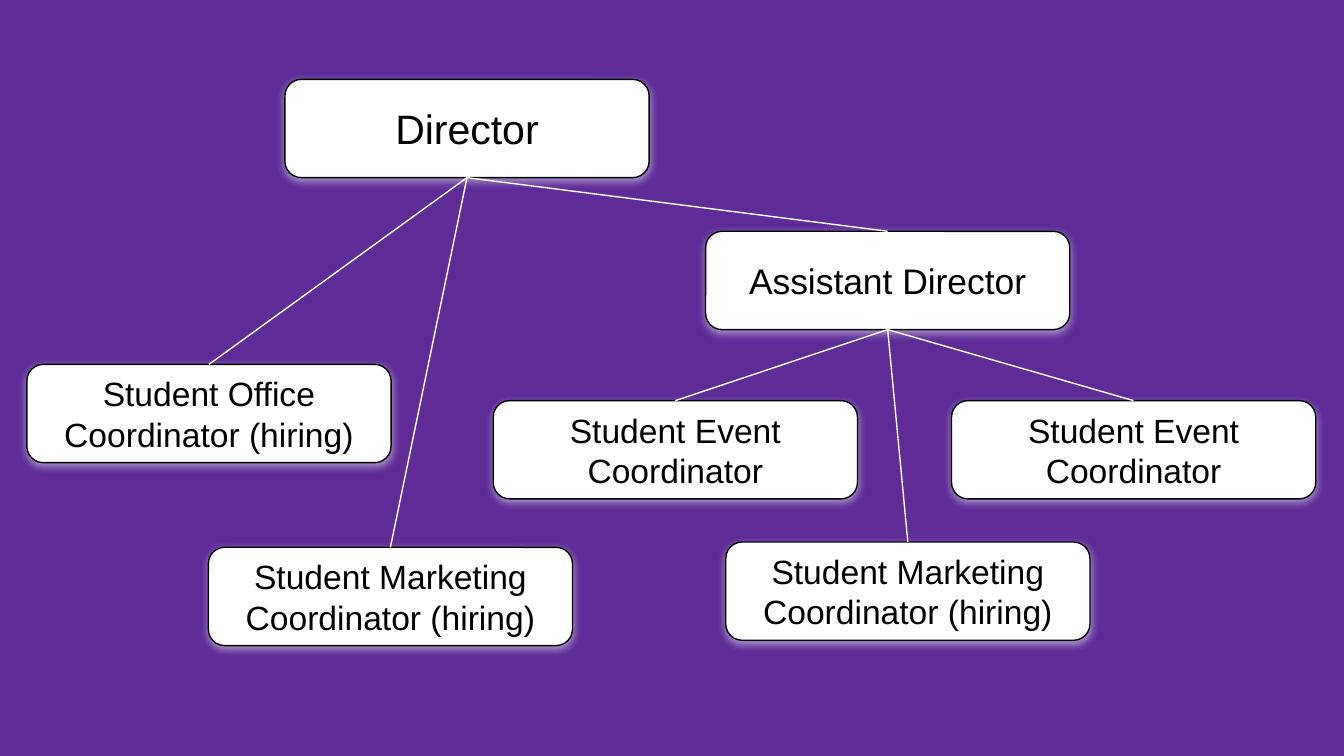
from dataclasses import dataclass

from lxml import etree
from pptx import Presentation
from pptx import util as u
from pptx.dml.color import RGBColor
from pptx.enum import shapes, text
from pptx.oxml.ns import qn
from pptx.shapes.autoshape import Shape
from pptx.slide import Slide

PURPLE = RGBColor(0x5E, 0x2B, 0x97)
WHITE = RGBColor(0xFF, 0xFF, 0xFF)
BLACK = RGBColor(0x00, 0x00, 0x00)

SLIDE_W = u.Inches(10)
SLIDE_H = SLIDE_W * 9 // 16
LINE_WIDTH = u.Pt(0.75)
BOX_W, BOX_H = 27.1, 13  # percent of the slide's width and height
TOP, BOTTOM = 0, 2  # connection sites of a box


@dataclass(frozen=True)
class Role:
    """A post in the chart; left and top are percentages of the slide's size."""
    title: str
    left: float
    top: float
    size: int = 18
    reports_to: int | None = None  # index of the superior in ROLES


ROLES = [
    Role("Director", 21.2, 10.5, size=22),
    Role("Student Office Coordinator (hiring)", 2, 48.2, reports_to=0),
    Role("Assistant Director", 52.5, 30.6, size=19, reports_to=0),
    Role("Student Marketing Coordinator (hiring)", 15.5, 72.4, reports_to=0),
    Role("Student Event Coordinator", 36.7, 53, reports_to=2),
    Role("Student Marketing Coordinator (hiring)", 54, 71.7, reports_to=2),
    Role("Student Event Coordinator", 70.8, 53, reports_to=2),
]


def across(percent: float) -> int:
    return round(SLIDE_W * percent / 100)


def down(percent: float) -> int:
    return round(SLIDE_H * percent / 100)


def write(box: Shape, words: str, *, size: int, color: RGBColor = BLACK,
          font: str = "Arial", inset: float = 0.1) -> None:
    frame = box.text_frame
    frame.word_wrap = True
    frame.vertical_anchor = text.MSO_ANCHOR.MIDDLE
    frame.margin_left = frame.margin_right = u.Inches(inset)
    frame.margin_top = frame.margin_bottom = u.Inches(inset)
    paragraph = frame.paragraphs[0]
    paragraph.alignment = text.PP_ALIGN.CENTER
    run = paragraph.add_run()
    run.text = words
    run.font.name = font
    run.font.size = u.Pt(size)
    run.font.color.rgb = color


def add_glow(box: Shape) -> None:
    """Give the box a soft, half-transparent white shadow just below it."""
    box.shadow.inherit = False
    effects = box._element.spPr.find(qn("a:effectLst"))
    shadow = etree.SubElement(
        effects, qn("a:outerShdw"), blurRad=str(u.Pt(4.5)), dist=str(u.Pt(1.5)),
        dir=str(90 * 60000), algn="bl", rotWithShape="0")
    color = etree.SubElement(shadow, qn("a:srgbClr"), val=str(WHITE))
    etree.SubElement(color, qn("a:alpha"), val="50000")


def add_role(slide: Slide, role: Role) -> Shape:
    box = slide.shapes.add_shape(
        shapes.MSO_SHAPE.ROUNDED_RECTANGLE,
        across(role.left), down(role.top), across(BOX_W), down(BOX_H))
    box.fill.solid()
    box.fill.fore_color.rgb = WHITE
    box.line.color.rgb = BLACK
    box.line.width = LINE_WIDTH
    add_glow(box)
    write(box, role.title, size=role.size)
    return box


def link(slide: Slide, superior: Shape, report: Shape) -> None:
    line = slide.shapes.add_connector(shapes.MSO_CONNECTOR.STRAIGHT, 0, 0, 0, 0)
    line.begin_connect(superior, BOTTOM)
    line.end_connect(report, TOP)
    line.line.color.rgb = WHITE
    line.line.width = LINE_WIDTH
    etree.SubElement(line._element.spPr, qn("a:effectLst"))


def main() -> None:
    deck = Presentation()
    deck.slide_width, deck.slide_height = SLIDE_W, SLIDE_H
    slide = deck.slides.add_slide(deck.slide_layouts[6])
    slide.background.fill.solid()
    slide.background.fill.fore_color.rgb = PURPLE

    boxes = [add_role(slide, role) for role in ROLES]
    for role, box in zip(ROLES, boxes):
        if role.reports_to is not None:
            link(slide, boxes[role.reports_to], box)
    deck.save("out.pptx")


if __name__ == "__main__":
    main()
